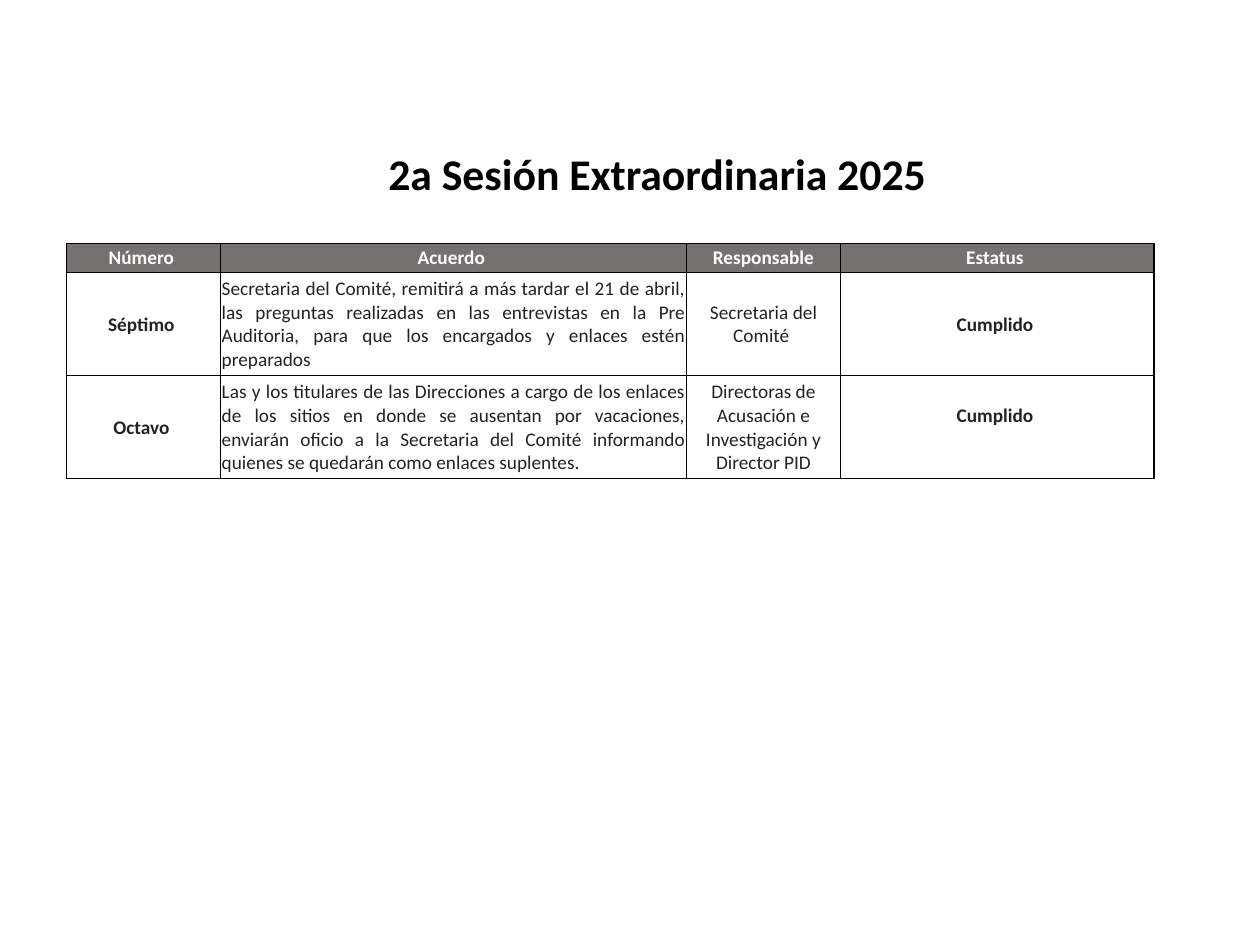
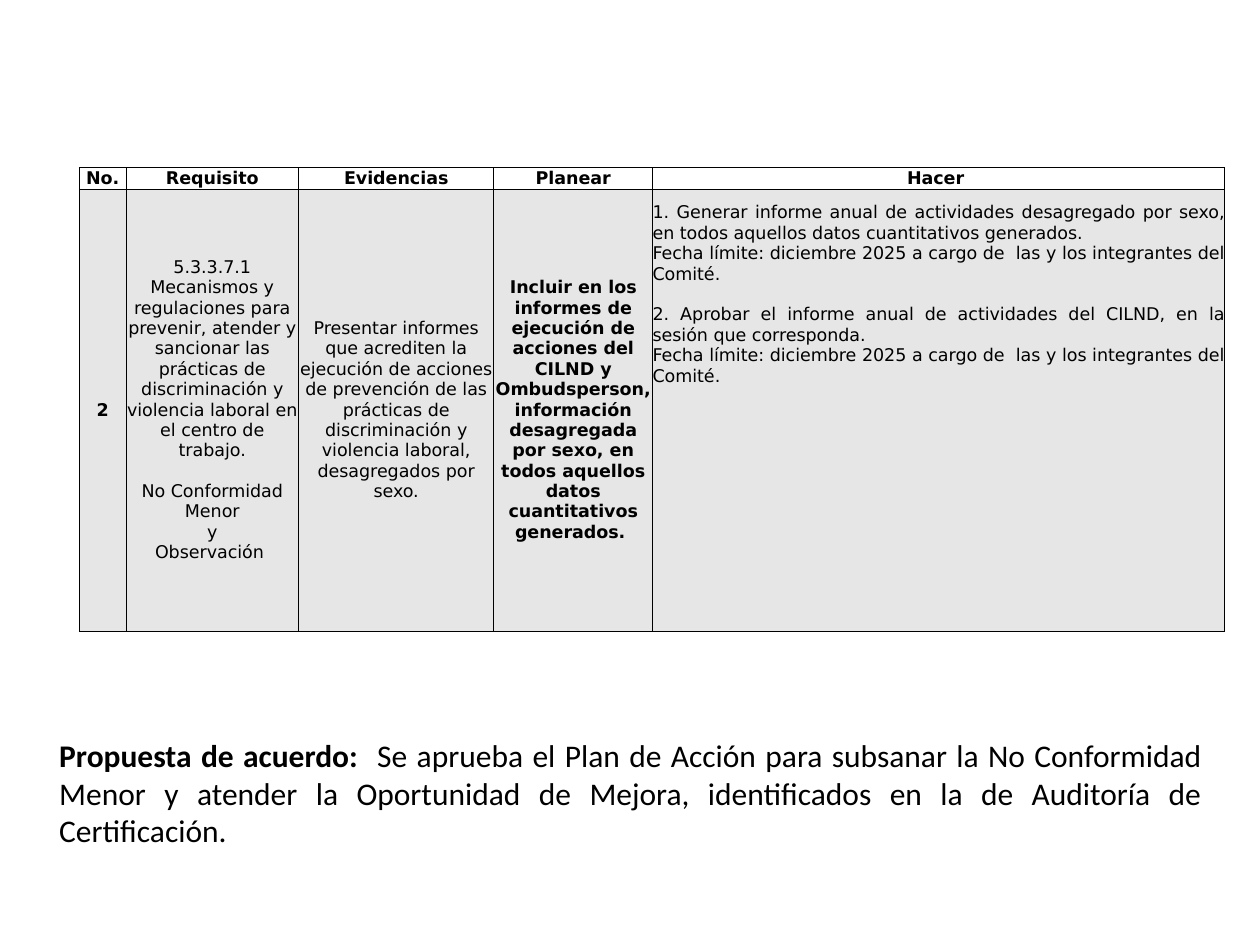
from lxml.etree import SubElement
from pptx import Presentation
from pptx.dml.color import RGBColor
from pptx.enum.text import MSO_ANCHOR, MSO_AUTO_SIZE, PP_ALIGN
from pptx.oxml.ns import qn
from pptx.util import Inches, Pt

COLORS = {"ink": "000000", "text": "222222", "white": "FFFFFF",
          "head": "767171", "band": "E7E6E6"}
TITLE = "2a Sesión Extraordinaria 2025"
NOTE = [("Propuesta de acuerdo:  ", True),
        ("Se aprueba el Plan de Acción para subsanar la No Conformidad Menor "
         "y atender la Oportunidad de Mejora, identificados en la de Auditoría "
         "de Certificación. ", False)]

# A line break starts a paragraph; a double break also leaves a gap.
PACTS = [
    ["Número ", "Acuerdo ", "Responsable", "Estatus "],
    ["Séptimo ",
     "Secretaria del Comité, remitirá a más tardar el 21 de abril, las "
     "preguntas realizadas en las entrevistas en la Pre Auditoria, para que "
     "los encargados y enlaces estén preparados",
     "Secretaria del Comité ", "Cumplido "],
    ["Octavo ",
     "Las y los titulares de las Direcciones a cargo de los enlaces de los "
     "sitios en donde se ausentan por vacaciones, enviarán oficio a la "
     "Secretaria del Comité informando quienes se quedarán como enlaces "
     "suplentes. ",
     "Directoras de Acusación e Investigación y Director PID", "Cumplido "],
]
LIMIT = ("Fecha límite: diciembre 2025 a cargo de  las y los integrantes "
         "del Comité.")
PLAN = [
    ["No.", "Requisito", "Evidencias", "Planear", "Hacer "],
    ["2",
     "5.3.3.7.1 Mecanismos y regulaciones para prevenir, atender y sancionar "
     "las prácticas de discriminación y violencia laboral en el centro de "
     "trabajo.\n\nNo Conformidad Menor\ny\nObservación ",
     "Presentar informes que acrediten la ejecución de acciones de prevención "
     "de las prácticas de discriminación y violencia laboral, desagregados "
     "por sexo.",
     "Incluir en los informes de ejecución de acciones del CILND y "
     "Ombudsperson, información desagregada por sexo, en todos aquellos datos "
     "cuantitativos generados. ",
     "1. Generar informe anual de actividades desagregado por sexo, en todos "
     f"aquellos datos cuantitativos generados.\n{LIMIT}\n\n"
     "2. Aprobar el informe anual de actividades del CILND, en la sesión que "
     f"corresponda.\n{LIMIT}"],
]
LOOKS = {
    "pacts": dict(font="Calibri", size=11, inset=0.01, bold={0, 3}, just=1,
                  ink=("white", "text"), fill=("head", None), edge=1),
    "plan": dict(font="DejaVu Sans", size=10, inset=0, bold={0, 3}, just=4,
                 ink=("ink", "ink"), fill=(None, "band"), edge=0.5),
}


def rgb(name):
    return RGBColor.from_string(COLORS[name])


def style(run, font, size, color, bold):
    run.font.name, run.font.size, run.font.bold = font, Pt(size), bold
    run.font.color.rgb = rgb(color)


def place(shape, left, top, width, height):
    shape.left, shape.top = Inches(left), Inches(top)
    shape.width, shape.height = Inches(width), Inches(height)


def draw_box(cell, right):
    """Outline a cell, with its own width for the right edge."""
    props = cell._tc.get_or_add_tcPr()
    for side in ("L", "R", "T", "B"):
        width = right if side == "R" else 0.5
        line = SubElement(props, qn(f"a:ln{side}"), w=str(Pt(width)))
        fill = SubElement(line, qn("a:solidFill"))
        SubElement(fill, qn("a:srgbClr"), val=COLORS["ink"])


def write(cell, text, look, head, bold, align):
    frame = cell.text_frame
    first = True
    for block in text.split("\n\n"):
        for num, line in enumerate(block.split("\n")):
            par = frame.paragraphs[0] if first else frame.add_paragraph()
            par.text, par.alignment = line, align
            if num == 0 and not first:
                par.space_before = Pt(11.65)
            style(par.runs[0], look["font"], look["size"],
                  look["ink"][0 if head else 1], bold)
            first = False


def add_grid(slide, rows, look, left, top, cols, highs):
    grid = slide.shapes.add_table(
        len(rows), len(cols), Inches(left), Inches(top),
        Inches(sum(cols)), Inches(sum(highs))).table
    grid.horz_banding = False
    for col, wide in zip(grid.columns, cols):
        col.width = Inches(wide)
    for row, high in zip(grid.rows, highs):
        row.height = Inches(high)
    for r, row in enumerate(rows):
        head = r == 0
        for c, text in enumerate(row):
            cell = grid.cell(r, c)
            cell.margin_left = cell.margin_right = Inches(look["inset"])
            cell.margin_top, cell.margin_bottom = Inches(look["inset"]), 0
            cell.vertical_anchor = MSO_ANCHOR.MIDDLE
            draw_box(cell, look["edge"] if c == len(cols) - 1 else 0.5)
            fill = look["fill"][0 if head else 1]
            if fill:
                cell.fill.solid()
                cell.fill.fore_color.rgb = rgb(fill)
            else:
                cell.fill.background()
            just = c == look["just"] and not head
            write(cell, text, look, head, head or c in look["bold"],
                  PP_ALIGN.JUSTIFY if just else PP_ALIGN.CENTER)
    return grid


def add_pacts(deck):
    slide = deck.slides.add_slide(deck.slide_layouts[5])
    title = slide.shapes.title
    place(title, 1.44, 1.11, 7.55, 0.52)
    title.text_frame.text = TITLE
    title.text_frame.auto_size = MSO_AUTO_SIZE.NONE
    par = title.text_frame.paragraphs[0]
    par.alignment = PP_ALIGN.CENTER
    style(par.runs[0], "Calibri", 25, "ink", True)
    grid = add_grid(slide, PACTS, LOOKS["pacts"], 0.53, 1.93,
                    [1.22, 3.7, 1.22, 2.49], [0.23, 0.82, 0.82])
    grid.cell(2, 3).margin_bottom = Inches(0.19)


def add_plan(deck):
    slide = deck.slides.add_slide(deck.slide_layouts[1])
    title, body = slide.placeholders
    title.element.getparent().remove(title.element)
    grid = add_grid(slide, PLAN, LOOKS["plan"], 0.63, 1.33,
                    [0.37, 1.37, 1.55, 1.26, 4.54], [0.17, 3.51])
    steps = grid.cell(1, 4)
    steps.vertical_anchor = MSO_ANCHOR.TOP
    steps.margin_top = Inches(0.11)

    place(body, 0.37, 5.79, 9.27, 1.01)
    body.text_frame.auto_size = MSO_AUTO_SIZE.NONE
    par = body.text_frame.paragraphs[0]
    props = par._p.get_or_add_pPr()
    props.set("marL", "0")
    props.set("indent", "0")
    SubElement(props, qn("a:buNone"))
    par.alignment, par.space_before = PP_ALIGN.JUSTIFY, Pt(0)
    for text, bold in NOTE:
        run = par.add_run()
        run.text = text
        style(run, "Calibri", 18, "ink", bold)


def main():
    deck = Presentation()
    deck.slide_width, deck.slide_height = Inches(10), Inches(7.5)
    add_pacts(deck)
    add_plan(deck)
    deck.save("out.pptx")


if __name__ == "__main__":
    main()
